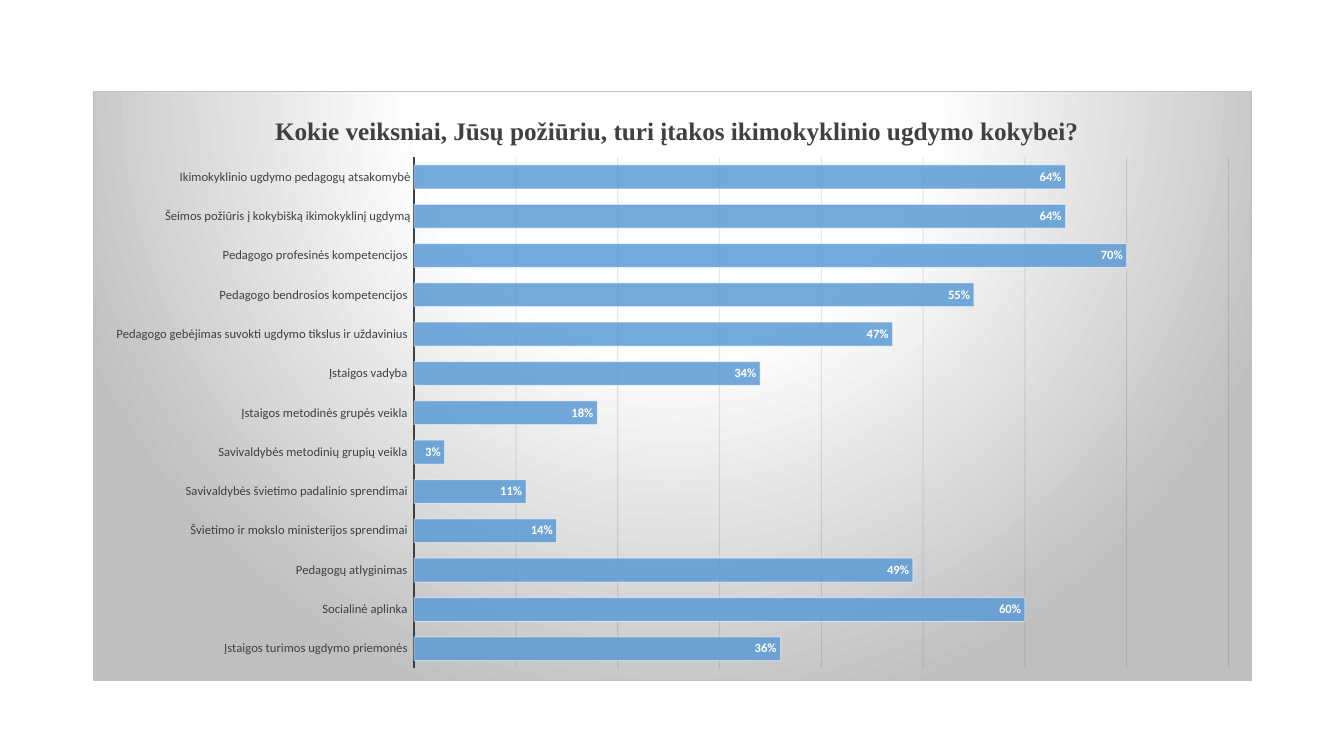
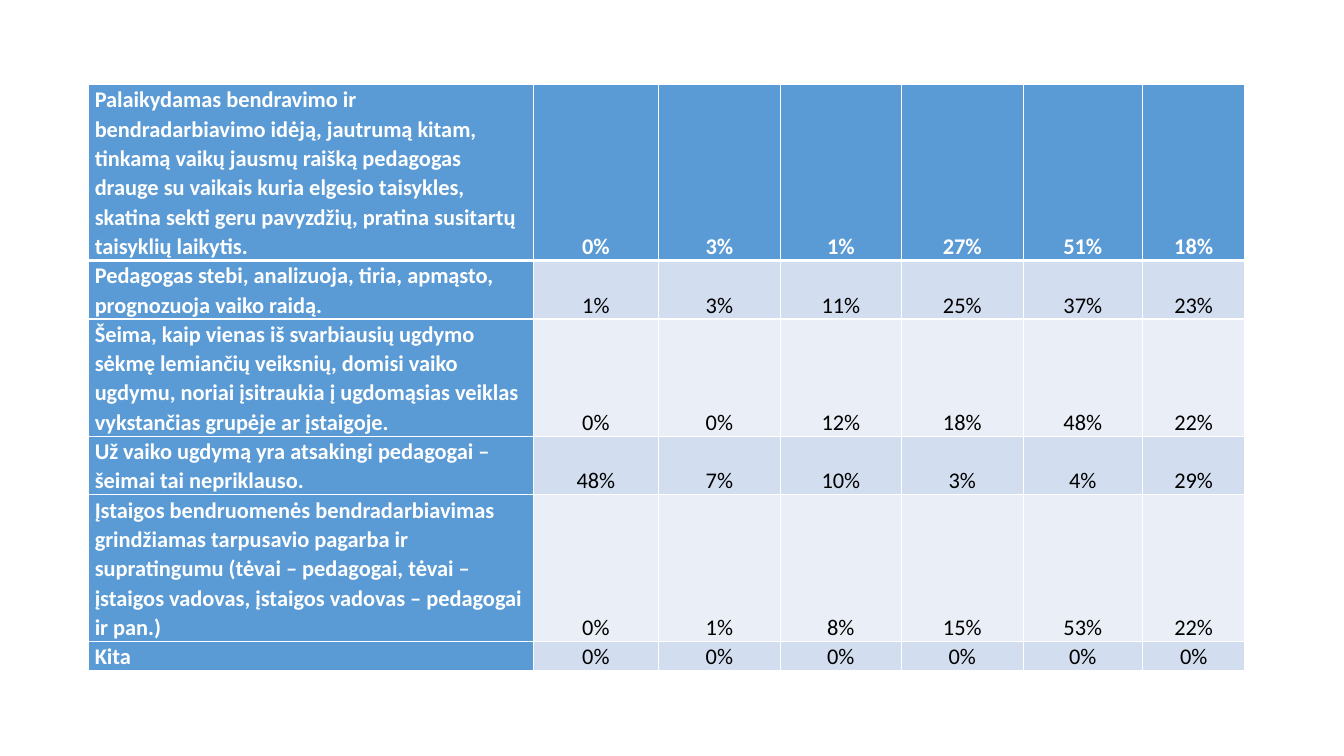
from lxml import etree
from pptx import Presentation
from pptx.chart.data import CategoryChartData
from pptx.dml.color import RGBColor
from pptx.enum.chart import XL_CHART_TYPE as CT, XL_LABEL_POSITION as LP, XL_TICK_MARK as TM
from pptx.enum.text import MSO_ANCHOR, PP_ALIGN
from pptx.oxml import parse_xml
from pptx.oxml.ns import qn
from pptx.util import Inches, Pt

NS = ('xmlns:a="http://schemas.openxmlformats.org/drawingml/2006/main" '
      'xmlns:c="http://schemas.openxmlformats.org/drawingml/2006/chart"')
FONT, TITLE_FONT = "Calibri", "Times New Roman"
BLUE, WHITE, BLACK = "5B9BD5", "FFFFFF", "000000"
GREY, DARK, GRID = "BFBFBF", "404040", "0D0D0D"
BANDS = ["D2DEEF", "EAEFF7"]
LINE_HEIGHT = 0.29

CHART_TITLE = "Kokie veiksniai, Jūsų požiūriu, turi įtakos ikimokyklinio ugdymo kokybei?"
FACTORS = [
    ("Įstaigos turimos ugdymo priemonės ", 0.36),
    ("Socialinė aplinka ", 0.6),
    ("Pedagogų atlyginimas ", 0.49),
    ("Švietimo ir mokslo ministerijos sprendimai ", 0.14),
    ("Savivaldybės švietimo padalinio sprendimai ", 0.11),
    ("Savivaldybės metodinių grupių veikla ", 0.03),
    ("Įstaigos metodinės grupės veikla ", 0.18),
    ("Įstaigos vadyba ", 0.34),
    ("Pedagogo gebėjimas suvokti ugdymo tikslus ir uždavinius ", 0.47),
    ("Pedagogo bendrosios kompetencijos ", 0.55),
    ("Pedagogo profesinės kompetencijos ", 0.7),
    ("Šeimos požiūris į kokybišką ikimokyklinį ugdymą", 0.64),
    ("Ikimokyklinio ugdymo pedagogų atsakomybė", 0.64),
]

COLUMNS = [4.41, 1.24, 1.21, 1.2, 1.21, 1.18, 1.02]
STATEMENTS = [
    ("Palaikydamas bendravimo ir bendradarbiavimo idėją, jautrumą kitam, tinkamą vaikų jausmų "
     "raišką pedagogas drauge su vaikais kuria elgesio taisykles, skatina sekti geru pavyzdžių, "
     "pratina susitartų taisyklių laikytis.", 6, [0, 3, 1, 27, 51, 18]),
    ("Pedagogas stebi, analizuoja, tiria, apmąsto, prognozuoja vaiko raidą.",
     2, [1, 3, 11, 25, 37, 23]),
    ("Šeima, kaip vienas iš svarbiausių ugdymo sėkmę lemiančių veiksnių, domisi vaiko ugdymu, "
     "noriai įsitraukia į ugdomąsias veiklas vykstančias grupėje ar įstaigoje.",
     4, [0, 0, 12, 18, 48, 22]),
    ("Už vaiko ugdymą yra atsakingi pedagogai – šeimai tai nepriklauso.",
     2, [48, 7, 10, 3, 4, 29]),
    ("Įstaigos bendruomenės bendradarbiavimas grindžiamas tarpusavio pagarba ir supratingumu "
     "(tėvai – pedagogai, tėvai – įstaigos vadovas, įstaigos vadovas – pedagogai ir pan.)",
     5, [0, 1, 8, 15, 53, 22]),
    ("Kita", 1, [0] * 6),
]


def rgb(value):
    """Turn a hex string into a colour."""
    return RGBColor.from_string(value)


def style_font(font, size, color, bold=False, name=FONT):
    """Set the face, size, colour and weight of a font."""
    font.name, font.size, font.bold = name, Pt(size), bold
    font.color.rgb = rgb(color)


def style_line(line, color, width, alpha=100):
    """Set the colour, width and opacity (percent) of a line."""
    line.color.rgb = rgb(color)
    line.width = Pt(width)
    set_alpha(line.fill, color, alpha)


def set_alpha(fill, color, alpha):
    """Give a solid fill a colour and an opacity in percent."""
    fill.solid()
    fill.fore_color.rgb = rgb(color)
    if alpha < 100:
        clr = fill._xPr.find(qn("a:solidFill"))[0]
        etree.SubElement(clr, qn("a:alpha"), val=str(alpha * 1000))


def layout(x, y, w=None, h=None):
    """Build a manual chart layout from fractions of the chart box."""
    target = '<c:layoutTarget val="inner"/>' if w else ""
    size = f'<c:w val="{w}"/><c:h val="{h}"/>' if w else ""
    return parse_xml(
        f'<c:layout {NS}><c:manualLayout>{target}<c:xMode val="edge"/><c:yMode val="edge"/>'
        f'<c:x val="{x}"/><c:y val="{y}"/>{size}</c:manualLayout></c:layout>')


def set_layout(parent, new, before):
    """Replace the layout of a chart part, ahead of the named child."""
    for old in parent.findall(qn("c:layout")):
        parent.remove(old)
    parent.find(qn(before)).addprevious(new)


def chart_background(chart):
    """Fill the chart area with a radial gradient inside a thin border."""
    stops = "".join(
        f'<a:gs pos="{pos * 1000}"><a:srgbClr val="{color}"/></a:gs>'
        for pos, color in [(0, WHITE), (39, WHITE), (100, GREY)])
    chart.element.find(qn("c:chart")).addnext(parse_xml(
        f'<c:spPr {NS}><a:gradFill rotWithShape="1"><a:gsLst>{stops}</a:gsLst>'
        '<a:path path="circle"><a:fillToRect l="50000" t="-80000" r="50000" b="180000"/></a:path>'
        f'</a:gradFill><a:ln w="{Pt(0.75)}"><a:solidFill><a:srgbClr val="{GREY}"/></a:solidFill>'
        '</a:ln></c:spPr>'))


def chart_axes(chart):
    """Style the category axis and hide the value axis behind faint gridlines."""
    cat, val = chart.category_axis, chart.value_axis
    cat.major_tick_mark = cat.minor_tick_mark = TM.NONE
    style_font(cat.tick_labels.font, 9, DARK)
    style_line(cat.format.line, DARK, 1.5)
    val.minimum_scale, val.maximum_scale, val.major_unit = 0, 0.8, 0.1
    val.has_major_gridlines = True
    style_line(val.major_gridlines.format.line, GRID, 0.75, 10)
    val.visible = False


def factor_chart(slide, x, y, w, h):
    """Draw the bar chart of quality factors in the given box."""
    data = CategoryChartData(number_format="0%")
    data.categories = [name for name, _ in FACTORS]
    data.add_series("Series 1", [value for _, value in FACTORS])
    chart = slide.shapes.add_chart(
        CT.BAR_CLUSTERED, Inches(x), Inches(y), Inches(w), Inches(h), data).chart
    chart.has_legend = False
    style_font(chart.font, 10, BLACK)
    chart_background(chart)
    chart_axes(chart)

    tf = chart.chart_title.text_frame
    tf.text = CHART_TITLE
    style_font(tf.paragraphs[0].runs[0].font, 18, DARK, True, TITLE_FONT)
    chart.chart_title.include_in_layout = False
    set_layout(chart.element.find(".//" + qn("c:title")), layout(0.153, 0.033), "c:overlay")
    set_layout(chart.element.find(".//" + qn("c:plotArea")),
               layout(0.277, 0.112, 0.703, 0.867), "c:barChart")

    plot = chart.plots[0]
    plot.gap_width, plot.vary_by_categories = 65, False
    bars = plot.series[0]
    set_alpha(bars.format.fill, BLUE, 85)
    style_line(bars.format.line, WHITE, 0.75, 50)
    labels = bars.data_labels
    labels.show_value, labels.position = True, LP.INSIDE_END
    labels.number_format, labels.number_format_is_linked = "0%", False
    style_font(labels.font, 9, WHITE, True)


def cell_borders(cell, top, bottom):
    """Draw white borders, with the top and bottom widths given in points."""
    tc_pr = cell._tc.get_or_add_tcPr()
    for i, (side, width) in enumerate([("L", 1), ("R", 1), ("T", top), ("B", bottom)]):
        tc_pr.insert(i, parse_xml(
            f'<a:ln{side} {NS} w="{Pt(width)}"><a:solidFill><a:srgbClr val="{WHITE}"/>'
            f'</a:solidFill></a:ln{side}>'))


def fill_cell(cell, text, row, col):
    """Write and style one table cell by its place in the grid."""
    strong = row == 0 or col == 0
    cell.text_frame.text = text
    cell.vertical_anchor = MSO_ANCHOR.BOTTOM
    cell.margin_left = cell.margin_right = Inches(0.06)
    cell.margin_top = cell.margin_bottom = 0
    p = cell.text_frame.paragraphs[0]
    p.line_spacing = 1.07
    p.alignment = PP_ALIGN.CENTER if col else PP_ALIGN.LEFT
    style_font(p.runs[0].font, 16, WHITE if strong else BLACK, strong)
    cell.fill.solid()
    cell.fill.fore_color.rgb = rgb(BLUE if strong else BANDS[(row - 1) % 2])
    cell_borders(cell, 3 if row == 1 else 1, 3 if row == 0 else 1)


def statement_table(slide, x, y):
    """Draw the table of statements with its top left corner at x, y."""
    height = LINE_HEIGHT * sum(lines for _, lines, _ in STATEMENTS)
    table = slide.shapes.add_table(
        len(STATEMENTS), len(COLUMNS), Inches(x), Inches(y),
        Inches(sum(COLUMNS)), Inches(height)).table
    table.first_col = True
    for column, width in zip(table.columns, COLUMNS):
        column.width = Inches(width)
    for row, (statement, lines, shares) in enumerate(STATEMENTS):
        table.rows[row].height = Inches(LINE_HEIGHT * lines)
        for col, text in enumerate([statement] + [f"{share}%" for share in shares]):
            fill_cell(table.cell(row, col), text, row, col)


def main():
    """Build both slides and save the presentation."""
    prs = Presentation()
    prs.slide_width, prs.slide_height = Inches(13.33), Inches(7.5)
    blank = prs.slide_layouts[6]
    factor_chart(prs.slides.add_slide(blank), 0.92, 0.9, 11.5, 5.86)
    statement_table(prs.slides.add_slide(blank), 0.88, 0.84)
    prs.save("out.pptx")


if __name__ == "__main__":
    main()
